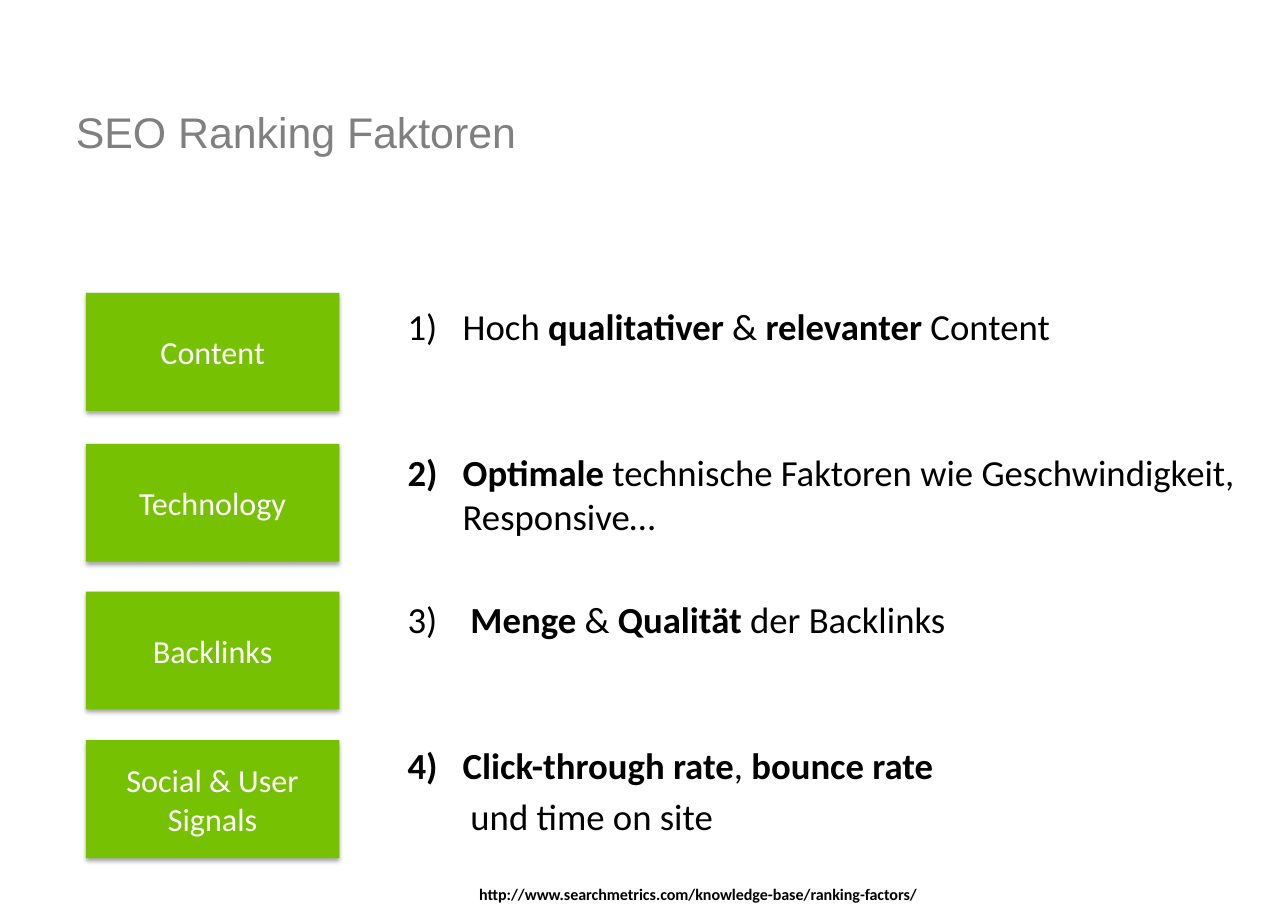
from dataclasses import dataclass

import lxml.etree
import pptx
import pptx.dml.color
import pptx.enum.shapes
import pptx.enum.text
import pptx.oxml.ns
import pptx.util

Inches = pptx.util.Inches
Pt = pptx.util.Pt
RGBColor = pptx.dml.color.RGBColor
ANCHOR = pptx.enum.text.MSO_ANCHOR
ALIGN = pptx.enum.text.PP_ALIGN
qn = pptx.oxml.ns.qn

GREEN = RGBColor(0x76, 0xC1, 0x01)
GREY = RGBColor(0x80, 0x80, 0x80)
BLACK = RGBColor(0, 0, 0)
WHITE = RGBColor(0xFF, 0xFF, 0xFF)

TITLE_FONT = {"name": "Arial", "size": Pt(28)}
BODY_FONT = {"name": "Calibri", "size": Pt(24)}
BOX_FONT = {"name": "Calibri", "size": Pt(21)}
SOURCE_FONT = {"name": "Calibri", "size": Pt(10.5), "bold": True}


@dataclass
class FactorBox:
    label: str
    top: float


@dataclass
class Line:
    runs: list[tuple[str, bool]]  # text, bold
    before: float = 0
    number: int = 0  # automatic number, 0 for none
    margin: float = 0.5
    indent: float = -0.5


BOXES = [
    FactorBox("Content", 2.66),
    FactorBox("Technology", 4.03),
    FactorBox("Backlinks", 5.37),
    FactorBox("Social & User Signals", 6.72),
]

LINES = [
    Line([("Hoch ", False), ("qualitativer", True), (" & ", False),
          ("relevanter ", True), ("Content", False)], number=1),
    Line([("Optimale ", True),
          ("technische Faktoren wie Geschwindigkeit, Responsive…", False)],
         before=66.7, number=2),
    Line([("3)\t", False), ("Menge", True), (" & ", False),
          ("Qualität ", True), ("der Backlinks", False)],
         before=38, margin=0.57, indent=-0.57),
    Line([("Click-through rate", True), (", ", False), ("bounce rate", True)],
         before=66.7, number=4),
    Line([("und time on site", False)], before=4.8, margin=0.57, indent=0),
]


def set_font(font, values: dict, color: RGBColor) -> None:
    for name, value in values.items():
        setattr(font, name, value)
    font.color.rgb = color


def add_text_frame(s, left: float, top: float, width: float, height: float):
    sp = s.shapes.add_textbox(Inches(left), Inches(top), Inches(width), Inches(height))
    tf = sp.text_frame
    insets = {"margin_left": 0.11, "margin_right": 0.11,
              "margin_top": 0.06, "margin_bottom": 0.06}
    for name, value in insets.items():
        setattr(tf, name, Inches(value))
    tf.word_wrap = True
    return tf


def add_line(p, line: Line) -> None:
    pPr = p._p.get_or_add_pPr()
    pPr.set("marL", str(Inches(line.margin)))
    pPr.set("indent", str(Inches(line.indent)))
    if line.number:
        lxml.etree.SubElement(pPr, qn("a:buAutoNum"), type="arabicParenR",
                              startAt=str(line.number))
    if line.before:
        p.space_before = Pt(line.before)
    for text, bold in line.runs:
        r = p.add_run()
        r.text = text
        set_font(r.font, BODY_FONT | {"bold": bold}, BLACK)


def add_box(s, box: FactorBox) -> None:
    sp = s.shapes.add_shape(pptx.enum.shapes.MSO_SHAPE.RECTANGLE, Inches(0.78),
                            Inches(box.top), Inches(2.3), Inches(1.07))
    sp.fill.solid()
    sp.fill.fore_color.rgb = GREEN
    sp.line.fill.background()
    # Soft shadow straight below
    sp.shadow.inherit = False
    effects = sp._element.spPr.find(qn("a:effectLst"))
    shadow = lxml.etree.SubElement(
        effects, qn("a:outerShdw"), blurRad=str(Pt(3.1)), dist=str(Pt(1.8)),
        dir="5400000", rotWithShape="0")
    color = lxml.etree.SubElement(shadow, qn("a:srgbClr"), val="000000")
    lxml.etree.SubElement(color, qn("a:alpha"), val="35000")
    # Label
    tf = sp.text_frame
    tf.word_wrap = True
    tf.vertical_anchor = ANCHOR.MIDDLE
    p = tf.paragraphs[0]
    p.text = box.label
    p.alignment = ALIGN.CENTER
    set_font(p.runs[0].font, BOX_FONT, WHITE)


def main() -> None:
    prs = pptx.Presentation()
    prs.slide_width, prs.slide_height = Inches(11.69), Inches(8.27)
    s = prs.slides.add_slide(prs.slide_layouts[6])

    # Title
    tf = add_text_frame(s, 0.58, 0.33, 7.64, 1.73)
    tf.vertical_anchor = ANCHOR.MIDDLE
    tf.text = "SEO Ranking Faktoren"
    set_font(tf.paragraphs[0].runs[0].font, TITLE_FONT, GREY)

    # Numbered explanations
    tf = add_text_frame(s, 3.59, 2.7, 7.91, 5.08)
    for i, line in enumerate(LINES):
        add_line(tf.add_paragraph() if i else tf.paragraphs[0], line)

    # Factor boxes
    for box in BOXES:
        add_box(s, box)

    # Source
    tf = add_text_frame(s, 4.24, 7.97, 4.67, 0.3)
    tf.text = "http://www.searchmetrics.com/knowledge-base/ranking-factors/"
    set_font(tf.paragraphs[0].runs[0].font, SOURCE_FONT, BLACK)

    prs.save("out.pptx")


if __name__ == "__main__":
    main()
